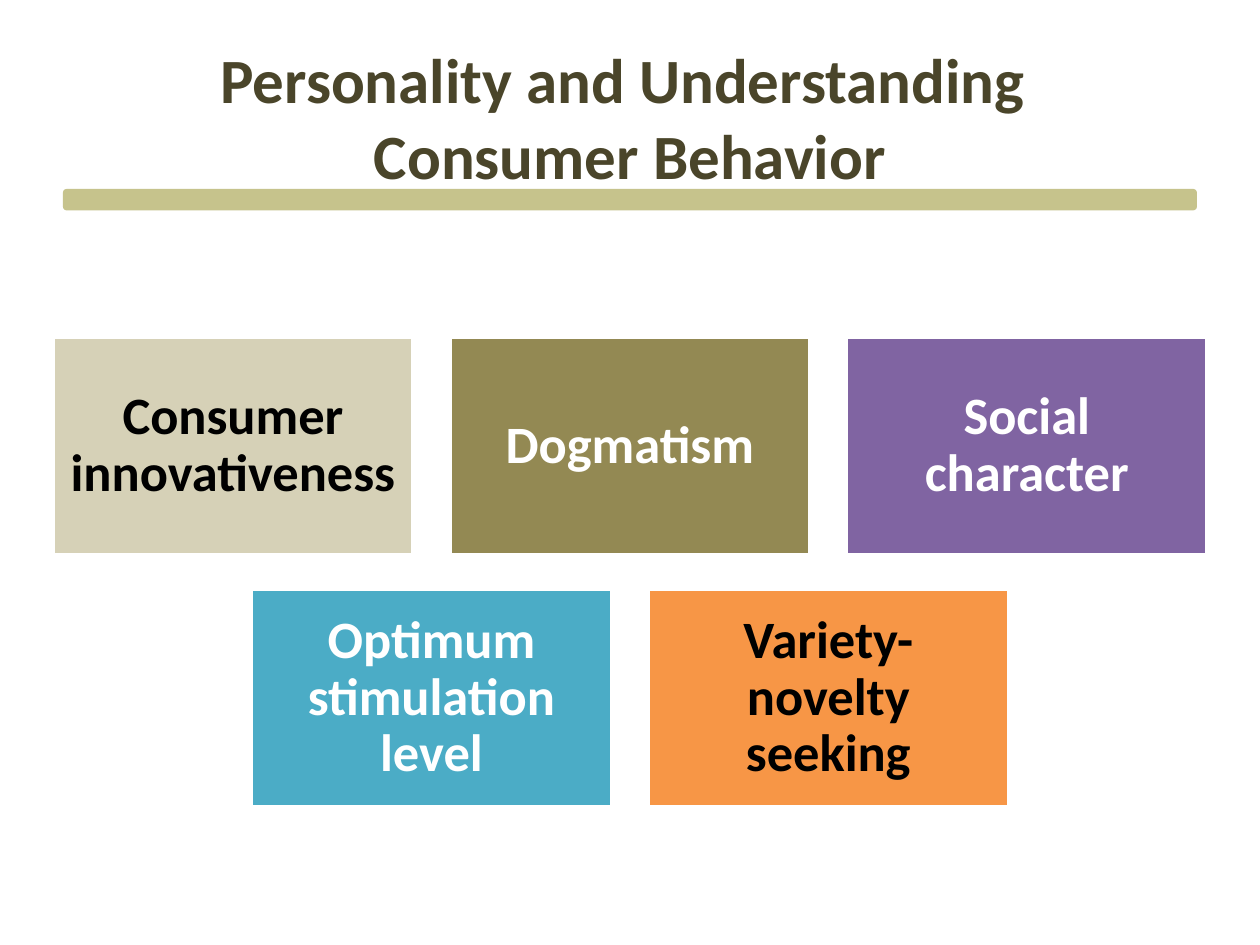
"""Build a slide of five personality traits used to understand consumer behavior."""
import pptx
import pptx.dml.color
import pptx.enum.shapes
import pptx.enum.text
import pptx.util

Inches = pptx.util.Inches
RGBColor = pptx.dml.color.RGBColor
MSO_SHAPE = pptx.enum.shapes.MSO_SHAPE

WHITE = RGBColor(0xFF, 0xFF, 0xFF)
BLACK = RGBColor(0x00, 0x00, 0x00)
BROWN = RGBColor(0x4A, 0x45, 0x2A)
KHAKI = RGBColor(0xC6, 0xC3, 0x8C)
SAND = RGBColor(0xD6, 0xD1, 0xB7)
OLIVE = RGBColor(0x93, 0x89, 0x53)
PURPLE = RGBColor(0x80, 0x64, 0xA2)
TEAL = RGBColor(0x4B, 0xAC, 0xC6)
ORANGE = RGBColor(0xF7, 0x96, 0x46)


def write_text(sp, text, size, color, spacing=None, inset=None):
    tf = sp.text_frame
    tf.word_wrap = True
    tf.auto_size = pptx.enum.text.MSO_AUTO_SIZE.NONE
    tf.vertical_anchor = pptx.enum.text.MSO_ANCHOR.MIDDLE
    if inset is not None:
        tf.margin_left = tf.margin_right = Inches(inset)
        tf.margin_top = tf.margin_bottom = Inches(inset)
    p = tf.paragraphs[0]
    p.text = text
    p.alignment = pptx.enum.text.PP_ALIGN.CENTER
    p.line_spacing = spacing
    for r in p.runs:
        r.font.name = "Calibri"
        r.font.size = pptx.util.Pt(size)
        r.font.bold = True
        r.font.color.rgb = color


def add_block(s, kind, left, top, width, height, fill):
    sp = s.shapes.add_shape(kind, Inches(left), Inches(top), Inches(width), Inches(height))
    sp.shadow.inherit = False
    sp.fill.solid()
    sp.fill.fore_color.rgb = fill
    sp.line.fill.background()
    return sp


prs = pptx.Presentation()
prs.slide_width = Inches(10)
prs.slide_height = Inches(7.5)
s = prs.slides.add_slide(prs.slide_layouts[5])

title = s.shapes.title
title.left, title.top = Inches(0.5), Inches(0.3)
title.width, title.height = Inches(9), Inches(1.25)
write_text(title, "Personality and Understanding \vConsumer Behavior", 36, BROWN)

add_block(s, MSO_SHAPE.ROUNDED_RECTANGLE, 0.5, 1.5, 9, 0.17, KHAKI)

rows = [
    [
        ("Consumer innovativeness", SAND, BLACK),
        ("Dogmatism", OLIVE, WHITE),
        ("Social character", PURPLE, WHITE),
    ],
    [
        ("Optimum stimulation level", TEAL, WHITE),
        ("Variety-novelty seeking", ORANGE, BLACK),
    ],
]
box_width, box_height, gap = 2.86, 1.72, 0.29
first_top, row_step = 2.68, 2.0

for row, traits in enumerate(rows):
    row_width = len(traits) * (box_width + gap) - gap
    row_left = (10 - row_width) / 2
    for col, (trait, fill, color) in enumerate(traits):
        left = row_left + col * (box_width + gap)
        top = first_top + row * row_step
        sp = add_block(s, MSO_SHAPE.RECTANGLE, left, top, box_width, box_height, fill)
        sp.line.color.rgb = WHITE
        sp.line.width = pptx.util.Pt(2)
        write_text(sp, trait, 30, color, spacing=0.9, inset=0.12)

prs.save("out.pptx")
